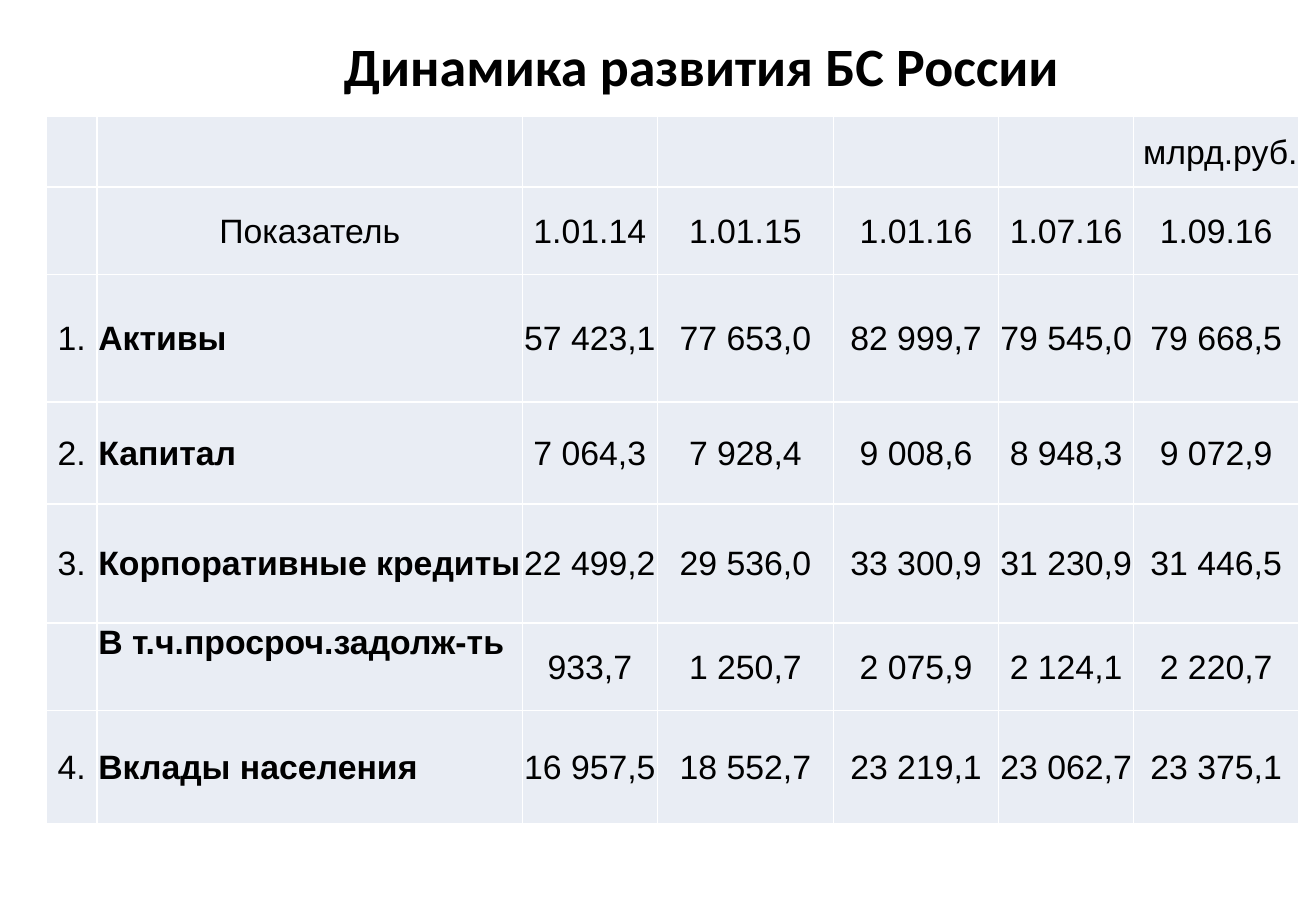
from lxml import etree
from pptx import Presentation
from pptx.dml.color import RGBColor
from pptx.enum.text import MSO_ANCHOR, PP_ALIGN
from pptx.oxml.ns import qn
from pptx.util import Inches, Pt

TOP, MIDDLE = MSO_ANCHOR.TOP, MSO_ANCHOR.MIDDLE
LEFT, CENTER, RIGHT = PP_ALIGN.LEFT, PP_ALIGN.CENTER, PP_ALIGN.RIGHT

TITLE = "Динамика развития БС России"
UNIT = "млрд.руб."
OVERDUE = "В т.ч.просроч.задолж-ть"
ROWS = [
    ("", "", "", "", "", "", UNIT),
    ("", "Показатель", "1.01.14", "1.01.15", "1.01.16", "1.07.16", "1.09.16"),
    ("1.", "Активы", "57 423,1", "77 653,0", "82 999,7", "79 545,0", "79 668,5"),
    ("2.", "Капитал", "7 064,3", "7 928,4", "9 008,6", "8 948,3", "9 072,9"),
    ("3.", "Корпоративные кредиты", "22 499,2", "29 536,0", "33 300,9", "31 230,9", "31 446,5"),
    ("", OVERDUE, "933,7", "1 250,7", "2 075,9", "2 124,1", "2 220,7"),
    ("4.", "Вклады населения", "16 957,5", "18 552,7", "23 219,1", "23 062,7", "23 375,1"),
]
COL_WIDTHS = [0.42, 3.5, 1.11, 1.45, 1.36, 1.11, 1.36]
ROW_HEIGHTS = [0.58, 0.72, 1.05, 0.84, 0.98, 0.72, 0.93]
HEADER_ROWS, NAME_COL = 2, 1
MARGINS = {"margin_left": 0.01, "margin_top": 0.01, "margin_right": 0.01, "margin_bottom": 0}
BLACK, WHITE, CELL_FILL = "000000", "FFFFFF", "E9EDF4"


def color(value):
    return RGBColor.from_string(value)


def write(p, text, align, **font):
    p.alignment = align
    r = p.add_run()
    r.text = text
    r.font.color.rgb = color(BLACK)
    for name, value in font.items():
        setattr(r.font, name, value)


def add_borders(cell):
    tc_pr = cell._tc.get_or_add_tcPr()
    for i, side in enumerate(("a:lnL", "a:lnR", "a:lnT", "a:lnB")):
        ln = etree.Element(qn(side), w=str(Pt(1)))
        fill = etree.SubElement(ln, qn("a:solidFill"))
        etree.SubElement(fill, qn("a:srgbClr"), val=WHITE)
        tc_pr.insert(i, ln)


def fill_cell(cell, text, is_name):
    cell.fill.solid()
    cell.fill.fore_color.rgb = color(CELL_FILL)
    add_borders(cell)
    if not text:
        return
    for name, value in MARGINS.items():
        setattr(cell, name, Inches(value))
    cell.vertical_anchor = TOP if text == OVERDUE else MIDDLE
    align = LEFT if is_name else RIGHT if text == UNIT else CENTER
    write(cell.text_frame.paragraphs[0], text, align, name="Arial", size=Pt(20), bold=is_name)


def add_title(s):
    box = s.shapes.add_textbox(Inches(1.64), Inches(0.05), Inches(8.27), Inches(0.97))
    tf = box.text_frame
    tf.word_wrap = True
    tf.vertical_anchor = MIDDLE
    write(tf.paragraphs[0], TITLE, CENTER, name="Calibri", size=Pt(32), bold=True)


def add_indicators(s):
    table = s.shapes.add_table(
        len(ROWS), len(COL_WIDTHS), Inches(0.38), Inches(0.96),
        Inches(sum(COL_WIDTHS)), Inches(sum(ROW_HEIGHTS))).table
    table.first_row = table.horz_banding = False
    for column, width in zip(table.columns, COL_WIDTHS):
        column.width = Inches(width)
    for row, height in zip(table.rows, ROW_HEIGHTS):
        row.height = Inches(height)
    for i, values in enumerate(ROWS):
        for j, text in enumerate(values):
            fill_cell(table.cell(i, j), text, i >= HEADER_ROWS and j == NAME_COL)


def main():
    prs = Presentation()
    prs.slide_width, prs.slide_height = Inches(10.83), Inches(7.5)
    s = prs.slides.add_slide(prs.slide_layouts[6])
    add_title(s)
    add_indicators(s)
    prs.save("out.pptx")


if __name__ == "__main__":
    main()
